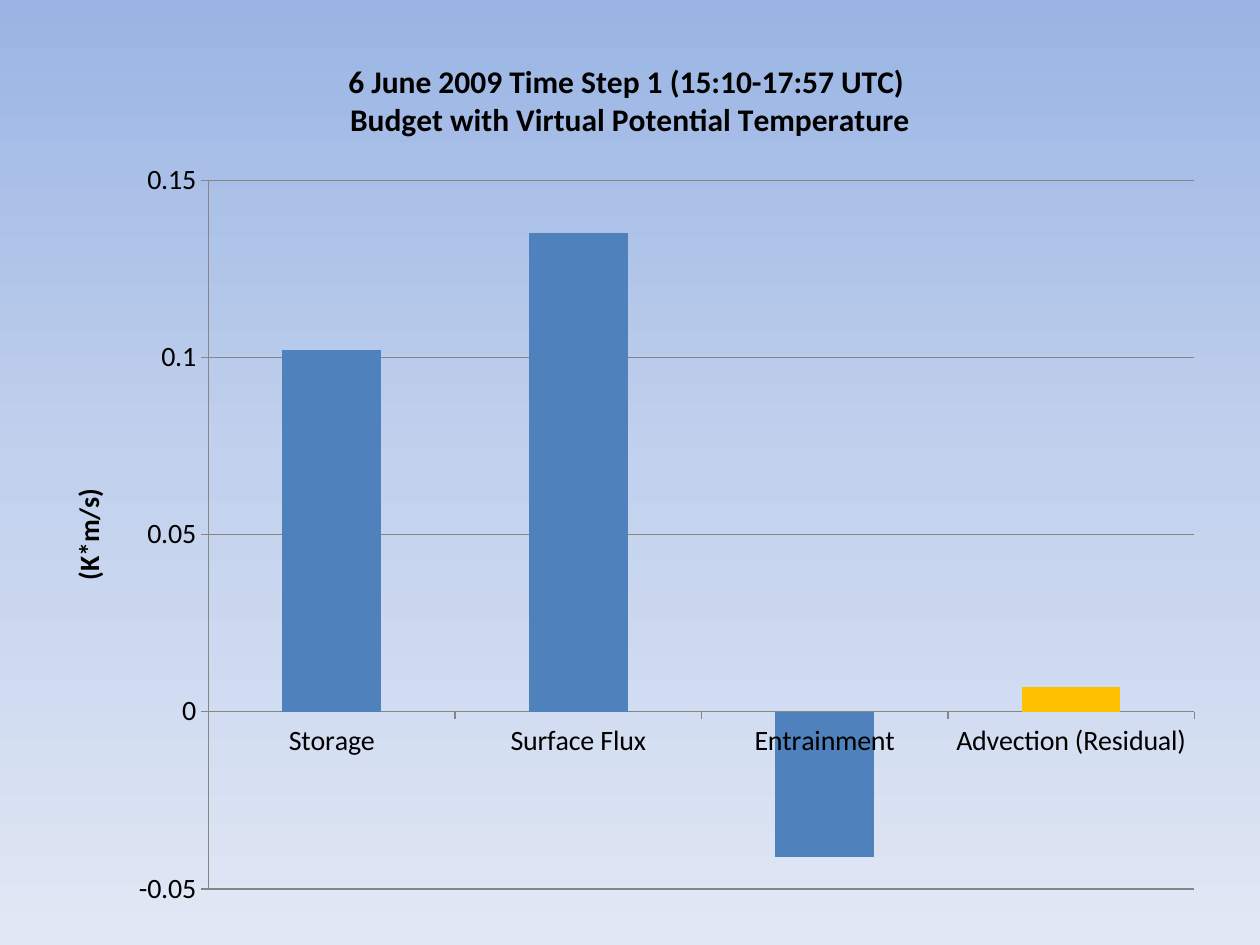
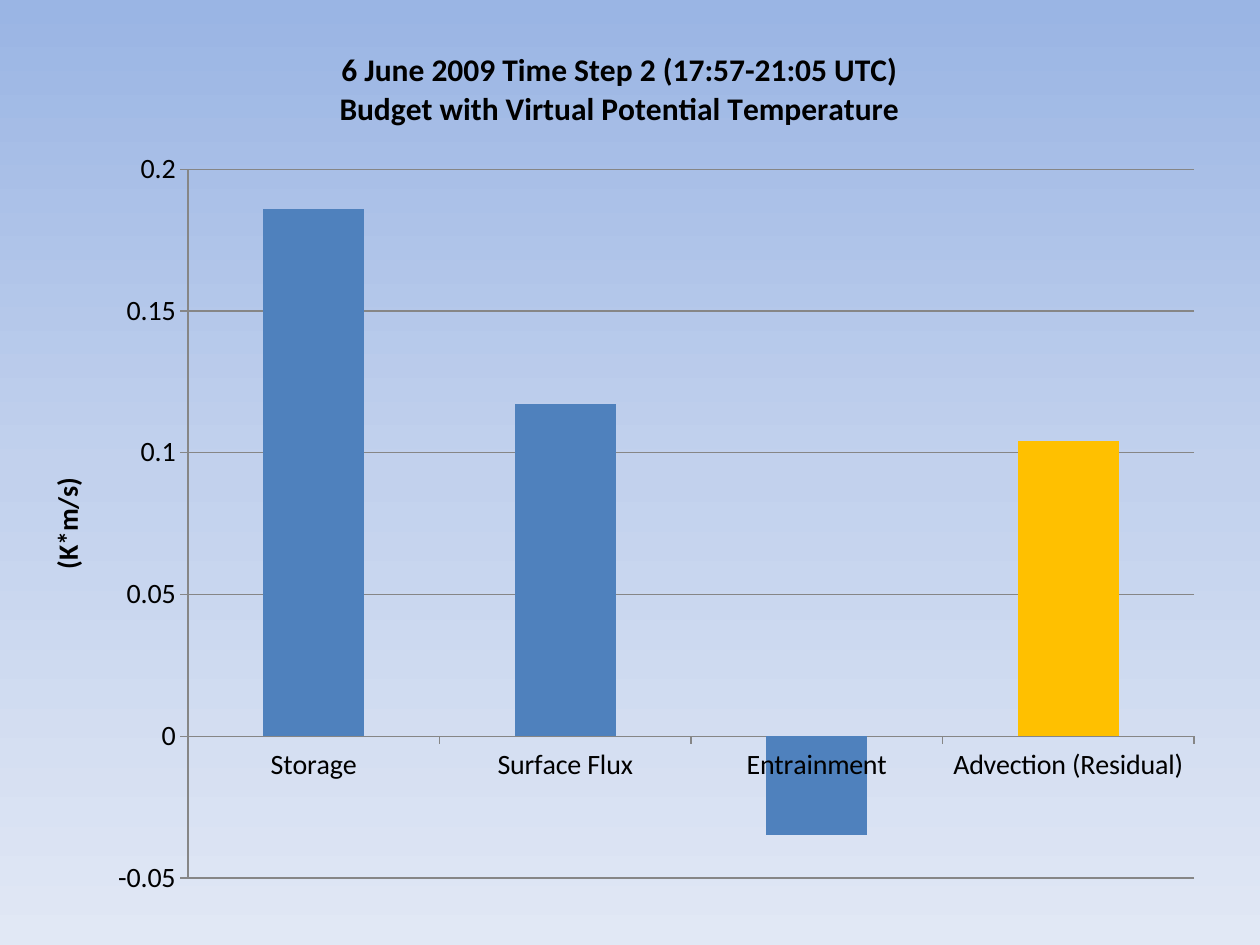
import copy

import pptx
import pptx.chart.data
import pptx.dml.color
import pptx.enum.chart
import pptx.util

PX = 914400 // 126
FONT = "Calibri"
BLACK = "000000"
BAR_BLUE = "4F81BD"
RESIDUAL_GOLD = "FFC000"
GRID_GRAY = "868686"
SKY_STOPS = [(0, "9AB5E4"), (0.5, "C2D1ED"), (1, "E1E8F5")]

BUDGET_TERMS = ["Storage", "Surface Flux", "Entrainment", "Advection (Residual)"]
SUBTITLE = "Budget with Virtual Potential Temperature"
UNIT = "(K*m/s)"

# heading, (left, top, width, height), budget values, top of the value axis
TIME_STEPS = [
    ("6 June 2009 Time Step 1 (15:10-17:57 UTC) ", (42, 32, 1176, 892),
     [0.102, 0.135, -0.041, 0.007], 0.15),
    ("6 June 2009 Time Step 2 (17:57-21:05 UTC)", (21, 21, 1197, 892),
     [0.186, 0.117, -0.035, 0.104], 0.2),
]


def px(length):
    return pptx.util.Emu(length * PX)


def rgb(hex_color):
    return pptx.dml.color.RGBColor.from_string(hex_color)


def style_font(font, size, bold=False):
    font.name = FONT
    font.size = pptx.util.Pt(size)
    font.bold = bold
    font.color.rgb = rgb(BLACK)


def paint_sky(slide):
    """Fill the background with a three-stop gradient from top to bottom."""
    fill = slide.background.fill
    fill.gradient()
    fill.gradient_angle = 270
    first_stop = slide.element.xpath(".//a:gs")[0]
    first_stop.addnext(copy.deepcopy(first_stop))
    for stop, (position, color) in zip(fill.gradient_stops, SKY_STOPS):
        stop.position = position
        stop.color.rgb = rgb(color)


def write_title(title, lines, size):
    frame = title.text_frame
    for number, line in enumerate(lines):
        paragraph = frame.add_paragraph() if number else frame.paragraphs[0]
        run = paragraph.add_run()
        run.text = line
        style_font(run.font, size, bold=True)


def style_line(line):
    line.color.rgb = rgb(GRID_GRAY)
    line.width = pptx.util.Pt(0.75)


def style_axis(axis):
    axis.major_tick_mark = pptx.enum.chart.XL_TICK_MARK.OUTSIDE
    axis.minor_tick_mark = pptx.enum.chart.XL_TICK_MARK.NONE
    style_font(axis.tick_labels.font, 16)
    style_line(axis.format.line)


def style_value_axis(axis, maximum):
    style_axis(axis)
    axis.minimum_scale = -0.05
    axis.maximum_scale = maximum
    axis.major_unit = 0.05
    axis.has_major_gridlines = True
    style_line(axis.major_gridlines.format.line)
    write_title(axis.axis_title, [UNIT], 16)
    axis.axis_title.element.xpath(".//a:bodyPr")[0].set("rot", "-5400000")


def color_bars(plot):
    plot.gap_width = 150
    plot.vary_by_categories = False
    budget = plot.series[0]
    budget.invert_if_negative = False
    residual = budget.points[len(BUDGET_TERMS) - 1]
    for bars, color in ((budget, BAR_BLUE), (residual, RESIDUAL_GOLD)):
        bars.format.fill.solid()
        bars.format.fill.fore_color.rgb = rgb(color)


def add_budget_chart(slide, heading, box, values, maximum):
    data = pptx.chart.data.CategoryChartData()
    data.categories = BUDGET_TERMS
    data.add_series("Series 1", values)
    chart = slide.shapes.add_chart(
        pptx.enum.chart.XL_CHART_TYPE.COLUMN_CLUSTERED, *map(px, box), data
    ).chart
    style_font(chart.font, 10)
    chart.has_legend = False
    write_title(chart.chart_title, [heading, SUBTITLE], 18)
    chart.chart_title.include_in_layout = False
    style_axis(chart.category_axis)
    style_value_axis(chart.value_axis, maximum)
    color_bars(chart.plots[0])


def main():
    deck = pptx.Presentation()
    deck.slide_width, deck.slide_height = px(1260), px(945)
    for time_step in TIME_STEPS:
        slide = deck.slides.add_slide(deck.slide_layouts[6])
        paint_sky(slide)
        add_budget_chart(slide, *time_step)
    deck.save("out.pptx")


if __name__ == "__main__":
    main()
